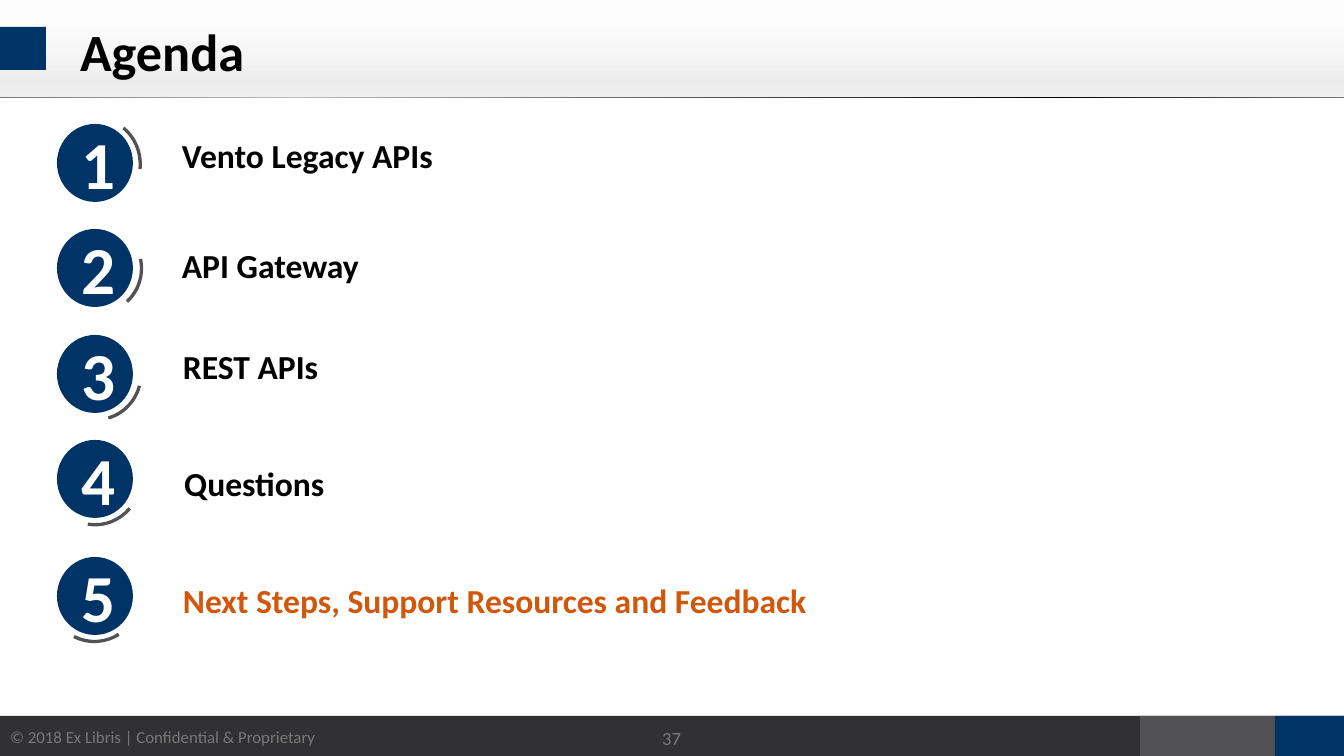
from lxml import etree
from pptx import Presentation
from pptx.dml.color import RGBColor
from pptx.enum.shapes import MSO_SHAPE
from pptx.enum.text import MSO_ANCHOR, PP_ALIGN
from pptx.oxml.ns import qn
from pptx.util import Pt

EMU_PER_PX = 914400 / 134.4
FONT = "Calibri"

NAVY = RGBColor(0x00, 0x34, 0x66)
CHARCOAL = RGBColor(0x31, 0x31, 0x33)
SLATE = RGBColor(0x52, 0x52, 0x54)
GREY = RGBColor(0x78, 0x78, 0x78)
SILVER = RGBColor(0xBB, 0xBB, 0xBB)
MIST = RGBColor(0xD7, 0xD7, 0xD7)
PEARL = RGBColor(0xE4, 0xE4, 0xE4)
SNOW = RGBColor(0xFA, 0xFA, 0xFA)
ORANGE = RGBColor(0xD0, 0x57, 0x0B)
WHITE = RGBColor(0xFF, 0xFF, 0xFF)
BLACK = RGBColor(0x00, 0x00, 0x00)

RECT, OVAL, ARC = MSO_SHAPE.RECTANGLE, MSO_SHAPE.OVAL, MSO_SHAPE.BLOCK_ARC
LEFT, CENTER = PP_ALIGN.LEFT, PP_ALIGN.CENTER
TOP, MIDDLE = MSO_ANCHOR.TOP, MSO_ANCHOR.MIDDLE


def px(value):
    return round(value * EMU_PER_PX)


class SlideBuilder:
    def __init__(self, slide):
        self.slide = slide

    def shape(self, kind, box, fill=None, parent=None):
        shapes = (parent or self.slide).shapes
        shape = shapes.add_shape(kind, *map(px, box))
        shape.shadow.inherit = False
        shape.line.fill.background()
        if fill is not None:
            shape.fill.solid()
            shape.fill.fore_color.rgb = fill
        return shape

    def gradient_bar(self, box, stops, angle):
        """Stops are (position %, colour, opacity %)."""
        bar = self.shape(RECT, box)
        bar.fill.gradient()
        gradient = bar._element.spPr.find(qn("a:gradFill"))
        stop_list = gradient.find(qn("a:gsLst"))
        for old_stop in list(stop_list):
            stop_list.remove(old_stop)
        for position, color, opacity in stops:
            stop = etree.SubElement(stop_list, qn("a:gs"), pos=str(position * 1000))
            rgb = etree.SubElement(stop, qn("a:srgbClr"), val=str(color))
            etree.SubElement(rgb, qn("a:alpha"), val=str(opacity * 1000))
        gradient.find(qn("a:lin")).set("ang", str(angle * 60000))

    def fill_text(self, frame, text, size, color, bold=False, align=LEFT, anchor=MIDDLE):
        frame.text = text
        frame.vertical_anchor = anchor
        paragraph = frame.paragraphs[0]
        paragraph.alignment = align
        font = paragraph.runs[0].font
        font.name, font.size, font.bold = FONT, Pt(size), bold
        font.color.rgb = color

    def text(self, box, text, size, color, inset=None, wrap=True, **style):
        frame = self.slide.shapes.add_textbox(*map(px, box)).text_frame
        frame.word_wrap = wrap
        if inset is not None:
            frame.margin_left = frame.margin_right = px(inset)
            frame.margin_top = frame.margin_bottom = px(inset)
        self.fill_text(frame, text, size, color, **style)

    def badge(self, number, top, arc_box, angle):
        group = self.slide.shapes.add_group_shape()
        self.shape(OVAL, (51, top, 87, 89), WHITE, group)
        arc = self.shape(ARC, arc_box, SLATE, group)
        for index, value in enumerate((181.725, 0.424, 0.035)):
            arc.adjustments[index] = value
        arc.rotation = angle
        disc = self.shape(OVAL, (57, top + 6, 76, 78), NAVY, group)
        self.fill_text(disc.text_frame, str(number), 36, WHITE, bold=True, align=CENTER)


def main():
    deck = Presentation()
    deck.slide_width, deck.slide_height = px(1344), px(756)
    page = SlideBuilder(deck.slides.add_slide(deck.slide_layouts[6]))

    # Footer
    for left, width, color in ((0, 1344, CHARCOAL), (1140, 135, SLATE), (1275, 69, NAVY)):
        page.shape(RECT, (left, 716, width, 43), color)
    page.text((-5, 720, 335, 34), "© 2018 Ex Libris | Confidential & Proprietary",
              9, GREY, wrap=False, align=CENTER, anchor=TOP)
    page.text((632, 711, 79, 54), "37", 10, GREY, align=CENTER)

    # Header
    page.gradient_bar((-1, 1, 1345, 97), ((0, SNOW, 12), (66, MIST, 30),
                                          (83, MIST, 47), (100, PEARL, 54)), 90)
    page.shape(RECT, (0, 27, 46, 43), NAVY)
    page.gradient_bar((0, 97, 1344, 1), ((0, GREY, 100), (22, SILVER, 100),
                                         (78, BLACK, 100), (100, GREY, 100)), 0)
    page.text((67, 8, 1219, 85), "Agenda", 28, BLACK, bold=True)

    # Agenda: topic, badge top, arc angle, label box, label inset, anchor, colour
    topics = (
        ("Vento Legacy APIs", 118, 5.1, (175, 124, 530, 62), 7, MIDDLE, BLACK),
        ("API Gateway", 223, 47, (175, 234, 530, 62), 7, MIDDLE, BLACK),
        ("REST APIs", 329, 73.5, (176, 335, 530, 62), 7, MIDDLE, BLACK),
        ("Questions", 434, 98.8, (171, 456, 517, 54), None, TOP, BLACK),
        ("Next Steps, Support Resources and Feedback", 551, 116.7,
         (176, 569, 655, 62), 7, MIDDLE, ORANGE),
    )
    for number, (topic, top, angle, box, inset, anchor, color) in enumerate(topics, 1):
        arc_box = (48, top - 2, 94, 97) if number == 1 else (47, top - 3, 97, 94)
        page.badge(number, top, arc_box, angle)
        page.text(box, topic, 18, color, inset=inset, bold=True, anchor=anchor)

    deck.save("out.pptx")


if __name__ == "__main__":
    main()
